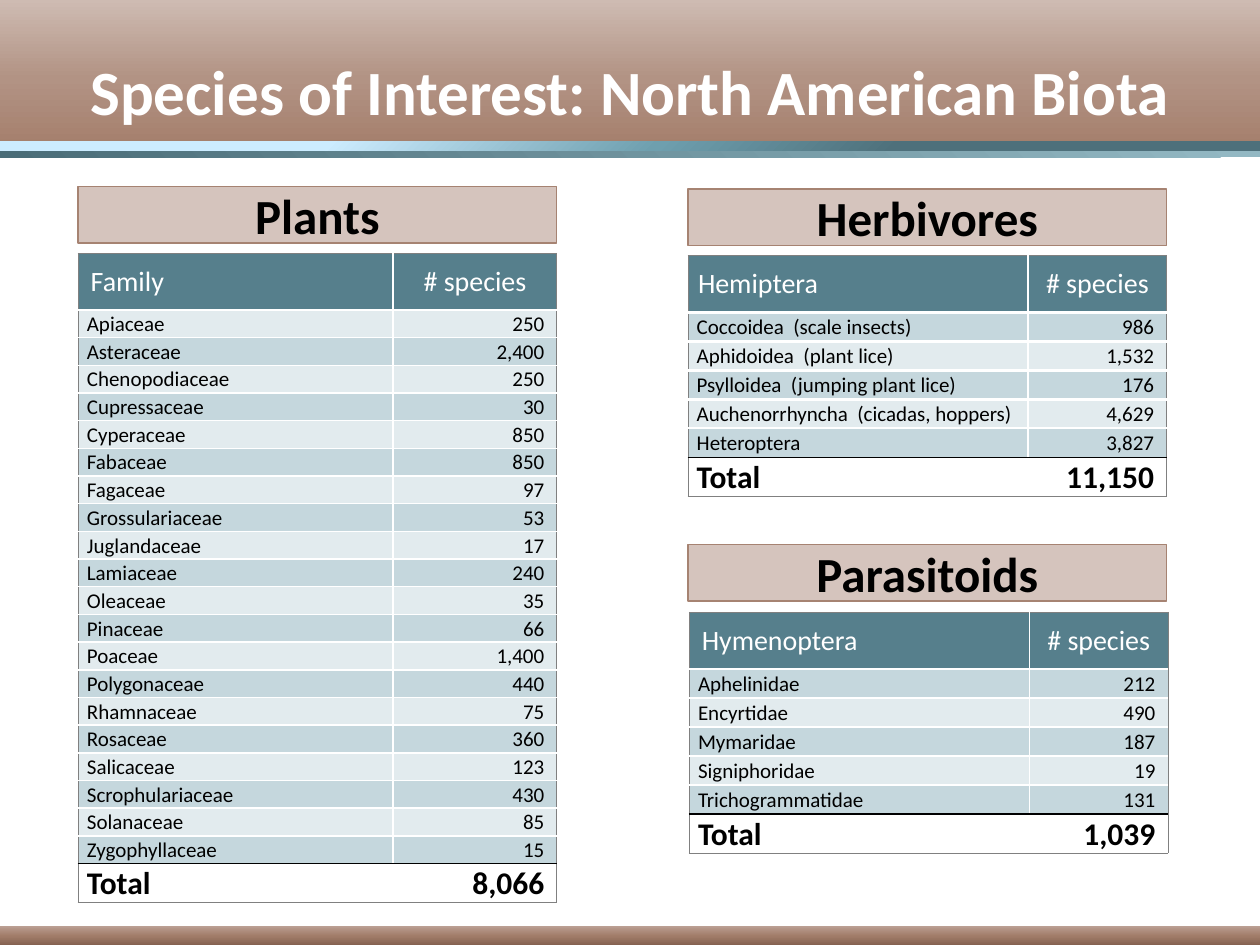
from dataclasses import dataclass

from lxml import etree
from pptx import Presentation
from pptx.dml.color import RGBColor
from pptx.enum.shapes import MSO_SHAPE
from pptx.enum.text import MSO_ANCHOR, PP_ALIGN
from pptx.oxml.ns import qn
from pptx.util import Inches, Pt

RECTANGLE = MSO_SHAPE.RECTANGLE
MIDDLE, BOTTOM = MSO_ANCHOR.MIDDLE, MSO_ANCHOR.BOTTOM
LEFT, CENTER, RIGHT = PP_ALIGN.LEFT, PP_ALIGN.CENTER, PP_ALIGN.RIGHT


@dataclass(frozen=True)
class Theme:
    font: str = "Calibri"
    white: str = "FFFFFF"
    black: str = "000000"
    frame: str = "808080"
    header: str = "567F8C"
    dark_row: str = "C5D7DD"
    light_row: str = "E2EBEE"
    label: str = "D5C4BD"
    label_line: str = "A68372"
    title_size: int = 36
    label_size: int = 28
    header_size: int = 16
    body_size: int = 12
    total_size: int = 18


theme = Theme()


def write(text_frame, text, size, color, align, bold=False):
    """Put one formatted run in the first paragraph and return the paragraph."""
    para = text_frame.paragraphs[0]
    para.alignment = align
    span = para.add_run()
    span.text = text
    span.font.name = theme.font
    span.font.size = Pt(size)
    span.font.bold = bold
    span.font.color.rgb = RGBColor.from_string(color)
    return para


def add_band(page, top, height, angle, stops):
    """Add a full-width bar with a gradient; the angle runs clockwise."""
    band = page.shapes.add_shape(RECTANGLE, 0, Inches(top), Inches(10), Inches(height))
    band.shadow.inherit = False
    band.line.fill.background()
    band.fill.gradient()
    gradient = band._element.spPr.find(qn("a:gradFill"))
    stop_list = gradient.find(qn("a:gsLst"))
    for old_stop in list(stop_list):
        stop_list.remove(old_stop)
    for percent, color in stops:
        stop = etree.SubElement(stop_list, qn("a:gs"), pos=str(percent * 1000))
        etree.SubElement(stop, qn("a:srgbClr"), val=color)
    direction = gradient.find(qn("a:lin"))
    direction.set("ang", str(angle * 60000))
    direction.set("scaled", "0")


deck = Presentation()
deck.slide_width, deck.slide_height = Inches(10), Inches(7.5)
page = deck.slides.add_slide(deck.slide_layouts[6])

# Title banner and footer bar
add_band(page, 0, 1.24, 270, [(0, "A37C69"), (50, "B29384"), (100, "CEBBB2")])
title = page.shapes.add_textbox(0, Inches(0.37), Inches(10), Inches(0.71))
title.text_frame.word_wrap = True
write(title.text_frame, "Species of Interest: North American Biota",
      theme.title_size, theme.white, CENTER, bold=True)
add_band(page, 1.12, 0.1, 225, [(29, "4E707B"), (48, "6E9FAE"), (74, "CCECFF")])
add_band(page, 1.2, 0.05, 135, [(1, "93B8C3"), (100, "4A6D78")])
add_band(page, 7.35, 0.15, 270, [(0, "856251"), (50, "A27D6A"), (100, "BB9F93")])

plants = [
    ("Apiaceae", 250), ("Asteraceae", 2400), ("Chenopodiaceae", 250),
    ("Cupressaceae", 30), ("Cyperaceae", 850), ("Fabaceae", 850),
    ("Fagaceae", 97), ("Grossulariaceae", 53), ("Juglandaceae", 17),
    ("Lamiaceae", 240), ("Oleaceae", 35), ("Pinaceae", 66),
    ("Poaceae", 1400), ("Polygonaceae", 440), ("Rhamnaceae", 75),
    ("Rosaceae", 360), ("Salicaceae", 123), ("Scrophulariaceae", 430),
    ("Solanaceae", 85), ("Zygophyllaceae", 15),
]
herbivores = [
    ("Coccoidea  (scale insects)", 986), ("Aphidoidea  (plant lice)", 1532),
    ("Psylloidea  (jumping plant lice)", 176),
    ("Auchenorrhyncha  (cicadas, hoppers)", 4629), ("Heteroptera", 3827),
]
parasitoids = [
    ("Aphelinidae", 212), ("Encyrtidae", 490), ("Mymaridae", 187),
    ("Signiphoridae", 19), ("Trichogrammatidae", 131),
]

# label, label place, table place, name column, row height, grid width, header inset
groups = [
    ("Plants", (0.62, 1.48), (0.62, 2.01), "Family", 2.5, 0.22, 1, 0.1, plants),
    ("Herbivores", (5.46, 1.5), (5.46, 2.03), "Hemiptera", 2.7, 0.23, 1.5, 0.08, herbivores),
    ("Parasitoids", (5.46, 4.32), (5.47, 4.86), "Hymenoptera", 2.7, 0.23, 1, 0.1, parasitoids),
]
group_width, header_height, total_height = 3.8, 0.45, 0.3

for (label, label_place, table_place, heading, name_width, row_height,
     grid_width, header_inset, species) in groups:
    box = page.shapes.add_shape(RECTANGLE, *map(Inches, label_place),
                                Inches(group_width), Inches(0.45))
    box.shadow.inherit = False
    box.fill.solid()
    box.fill.fore_color.rgb = RGBColor.from_string(theme.label)
    box.line.color.rgb = RGBColor.from_string(theme.label_line)
    box.line.width = Pt(0.75)
    box.text_frame.vertical_anchor = MIDDLE
    para = write(box.text_frame, label, theme.label_size, theme.black, CENTER, bold=True)
    para.space_before = Pt(5.6)

    total = sum(count for _, count in species)
    rows = [(heading, "# species")]
    rows += [(name, f"{count:,}") for name, count in species]
    rows.append(("Total", f"{total:,}"))
    last = len(rows) - 1
    heights = [header_height] + [row_height] * len(species) + [total_height]

    table = page.shapes.add_table(len(rows), 2, *map(Inches, table_place),
                                  Inches(group_width), Inches(sum(heights))).table
    table.first_row = table.horz_banding = False
    table.columns[0].width = Inches(name_width)
    table.columns[1].width = Inches(group_width - name_width)

    # Horizontal rules from the top edge to the bottom edge
    outer, grid = (theme.frame, 0.5), (theme.white, grid_width)
    rules = [outer, (theme.white, 1.5)] + [grid] * (len(species) - 1)
    rules += [(theme.black, 1), outer]

    for row, texts in enumerate(rows):
        table.rows[row].height = Inches(heights[row])
        is_header, is_total = row == 0, row == last
        if is_header:
            fill, size, color = theme.header, theme.header_size, theme.white
        elif is_total:
            fill, size, color = theme.white, theme.total_size, theme.black
        else:
            fill = theme.light_row if (last - row) % 2 == 0 else theme.dark_row
            size, color = theme.body_size, theme.black

        for column, text in enumerate(texts):
            cell = table.cell(row, column)
            cell.fill.solid()
            cell.fill.fore_color.rgb = RGBColor.from_string(fill)
            cell.vertical_anchor = BOTTOM if is_total else MIDDLE
            if is_header:
                align = CENTER if column else LEFT
                cell.margin_left = Inches(0.1 if column else header_inset)
            else:
                align = RIGHT if column else LEFT
                cell.margin_left = Inches(0.01 if column else 0.07)
                cell.margin_right = Inches(0.1 if column else 0.01)
                cell.margin_top, cell.margin_bottom = Inches(0.01), 0
            write(cell.text_frame, text, size, color, align, bold=is_total)

            sides = {
                "a:lnL": grid if column else outer,
                "a:lnR": outer if column else grid,
                "a:lnT": rules[row],
                "a:lnB": rules[row + 1],
            }
            properties = cell._tc.get_or_add_tcPr()
            for position, (side, (line_color, width)) in enumerate(sides.items()):
                border = etree.Element(qn(side), w=str(Pt(width)))
                line_fill = etree.SubElement(border, qn("a:solidFill"))
                etree.SubElement(line_fill, qn("a:srgbClr"), val=line_color)
                properties.insert(position, border)

deck.save("out.pptx")
